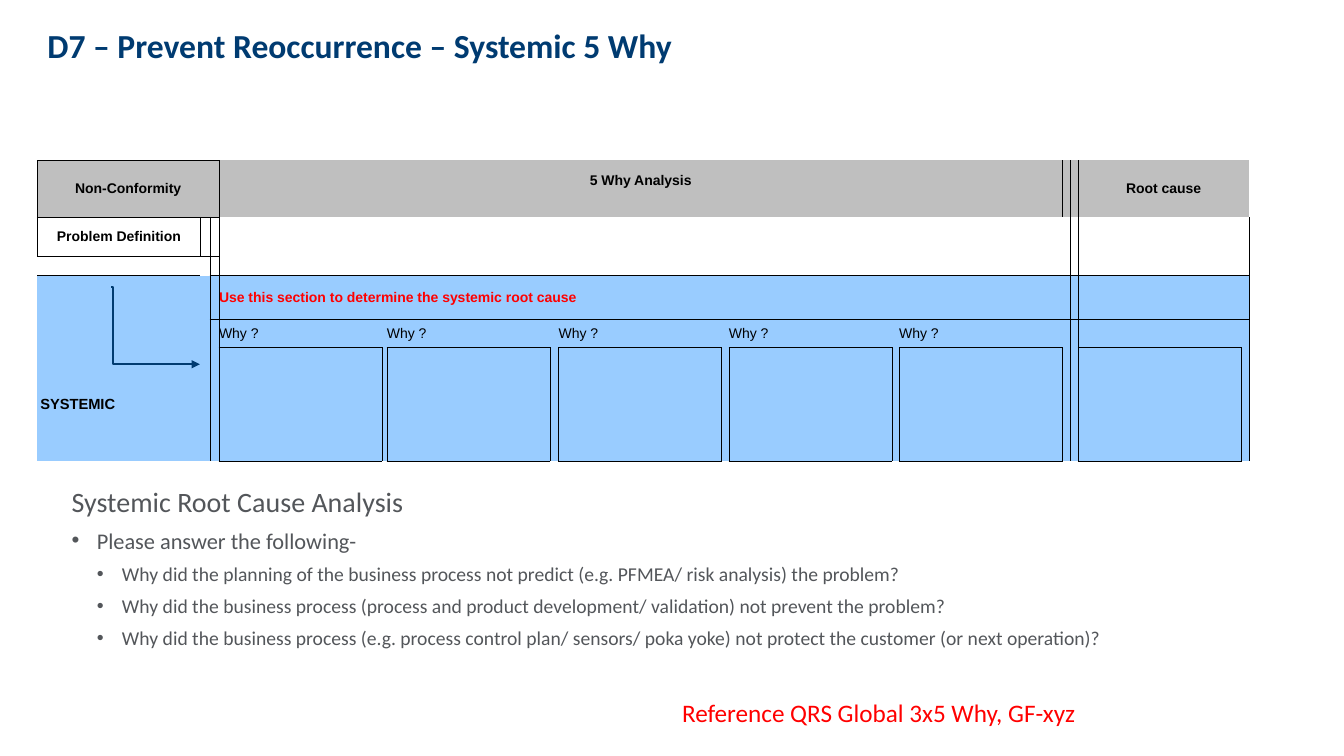
"""Build the D7 systemic 5 Why slide."""
from lxml.etree import SubElement
from pptx import Presentation
from pptx.dml.color import RGBColor
from pptx.enum.shapes import MSO_CONNECTOR
from pptx.enum.text import MSO_ANCHOR, MSO_AUTO_SIZE, PP_ALIGN
from pptx.oxml.ns import qn
from pptx.util import Cm, Pt

TITLE = "D7 – Prevent Reoccurrence – Systemic 5 Why"
REFERENCE = "Reference QRS Global 3x5 Why, GF-xyz"
QUESTIONS = [
    (0, 20, "Systemic Root Cause Analysis"),
    (1, 16, "Please answer the following-"),
    (2, 14, "Why did the planning of the business process not predict (e.g. PFMEA/ risk analysis) the problem?"),
    (2, 14, "Why did the business process (process and product development/ validation) not prevent the problem?"),
    (2, 14, "Why did the business process (e.g. process control plan/ sensors/ poka yoke) "
            "not protect the customer (or next operation)?"),
]

NAVY, GREY, RED, BLACK = "003B71", "53565A", "FF0000", "000000"
HEADER_FILL, SYSTEMIC_FILL = "BFBFBF", "99CCFF"
NO_STYLE = "{2D5ABB26-0587-4C30-8999-92F81FD0307C}"

BOX = 4.11
COLUMNS = [BOX, 0.24, 0.23, BOX, 0.12, BOX, 0.22, BOX, 0.18,
           BOX, 0.18, BOX, 0.2, 0.2, BOX, 0.2]
ROWS = [1.43, 1.0, 0.48, 1.09, 0.72, 2.86]
WHY_COLUMNS = range(3, 12, 2)
ROOT_COLUMN = 14
MERGES = [(0, 0, 2), (0, 3, 11), (0, 14, 15), (3, 3, 11)]

CENTRED = {"bold": True, "align": PP_ALIGN.CENTER}
CELL_TEXTS = {
    (0, 0): ("Non-Conformity", CENTRED),
    (0, 3): ("5 Why Analysis", CENTRED),
    (0, 14): ("Root cause", CENTRED),
    (1, 0): ("Problem Definition", CENTRED),
    (3, 3): ("Use this section to determine the systemic root cause", {"bold": True, "color": RED}),
    (5, 0): ("SYSTEMIC", {"bold": True, "size": 10.5}),
    **{(4, column): ("Why ?", {}) for column in WHY_COLUMNS},
}

OUTLINED = [(0, 0, 2), (1, 0, 0)] + [(5, column, column) for column in [*WHY_COLUMNS, ROOT_COLUMN]]
UPRIGHTS = [(2, 1), (13, 0), (16, 1)]


def rgb(value):
    """Turn a hex string into a colour."""
    return RGBColor.from_string(value)


def write(para, text, size=10, color=BLACK, font="Arial", bold=False, align=PP_ALIGN.LEFT):
    """Write one formatted span into a paragraph."""
    para.alignment = align
    span = para.add_run()
    span.text = text
    span.font.size = Pt(size)
    span.font.name = font
    span.font.bold = bold
    span.font.color.rgb = rgb(color)


def place(shape, left, top, width, height):
    """Move and size a shape in centimetres."""
    shape.left, shape.top, shape.width, shape.height = map(Cm, (left, top, width, height))


def set_bullet(para, level):
    """Indent a paragraph and give it a bullet below the top level."""
    para.level = level
    properties = para._p.get_or_add_pPr()
    properties.set("marL", str(Cm(0.635 * level)))
    properties.set("indent", str(-Cm(0.635) if level else 0))
    if not level:
        SubElement(properties, qn("a:buNone"))
        return
    SubElement(SubElement(properties, qn("a:buClr")), qn("a:srgbClr"), val=GREY)
    SubElement(properties, qn("a:buFont"), typeface="Arial")
    SubElement(properties, qn("a:buChar"), char="•")


def add_questions(body):
    """Fill the body placeholder with the bulleted questions."""
    place(body, 1.55, 12.09, 28.93, 6.15)
    frame = body.text_frame
    frame.auto_size = MSO_AUTO_SIZE.NONE
    frame.vertical_anchor = MSO_ANCHOR.TOP
    for index, (level, size, text) in enumerate(QUESTIONS):
        para = frame.add_paragraph() if index else frame.paragraphs[0]
        para.space_before, para.space_after = Pt(0), Pt(6)
        set_bullet(para, level)
        write(para, text, size=size, color=GREY, font="Calibri")


def table_edges():
    """Return the upright and level grid edges that carry a line."""
    upright = {(row, edge) for edge, first in UPRIGHTS for row in range(first, len(ROWS))}
    level = {(3, column) for column in range(2, len(COLUMNS))}
    for row, first, last in OUTLINED:
        upright |= {(row, first), (row, last + 1)}
        level |= {(edge, column) for edge in (row, row + 1) for column in range(first, last + 1)}
    return upright, level


def format_cell(cell, row, column, upright, level):
    """Set the margins, lines, fill and text of one cell."""
    cell.margin_left = cell.margin_right = cell.margin_top = cell.margin_bottom = 0
    cell.vertical_anchor = MSO_ANCHOR.MIDDLE
    right = column + (cell.span_width if cell.is_merge_origin else 1)
    sides = {"a:lnL": (row, column) in upright, "a:lnR": (row, right) in upright,
             "a:lnT": (row, column) in level, "a:lnB": (row + 1, column) in level}
    for tag, drawn in sides.items():
        if drawn:
            line = SubElement(cell._tc.get_or_add_tcPr(), qn(tag), w=str(Pt(0.5)))
            SubElement(SubElement(line, qn("a:solidFill")), qn("a:srgbClr"), val=BLACK)
    if row in (1, 2):
        cell.fill.background()
    else:
        cell.fill.solid()
        cell.fill.fore_color.rgb = rgb(SYSTEMIC_FILL if row else HEADER_FILL)
    para = cell.text_frame.paragraphs[0]
    if (row, column) in CELL_TEXTS:
        text, options = CELL_TEXTS[row, column]
        write(para, text, **options)
    else:
        SubElement(para._p, qn("a:endParaRPr"), sz="800")


def add_why_table(page):
    """Add the 5 Why grid."""
    frame = page.shapes.add_table(len(ROWS), len(COLUMNS), Cm(0.94), Cm(4.04),
                                  Cm(sum(COLUMNS)), Cm(sum(ROWS)))
    table = frame.table
    table.first_row = table.horz_banding = False
    table._tbl.tblPr.find(qn("a:tableStyleId")).text = NO_STYLE
    for column, width in zip(table.columns, COLUMNS):
        column.width = Cm(width)
    for row, height in zip(table.rows, ROWS):
        row.height = Cm(height)
    for row, first, last in MERGES:
        table.cell(row, first).merge(table.cell(row, last))
    upright, level = table_edges()
    for row in range(len(ROWS)):
        for column in range(len(COLUMNS)):
            format_cell(table.cell(row, column), row, column, upright, level)
    table.cell(0, 3).margin_bottom = Cm(0.4)
    table.cell(5, 0).margin_left = Cm(0.08)


def add_arrow(page):
    """Add the elbow arrow from the problem definition to the whys."""
    arrow = page.shapes.add_connector(MSO_CONNECTOR.ELBOW, Cm(2.8), Cm(7.24), Cm(5.04), Cm(9.18))
    arrow.line.color.rgb = rgb(NAVY)
    arrow.line.width = Pt(1.5)
    properties = arrow._element.spPr
    SubElement(properties.find(qn("a:ln")), qn("a:tailEnd"), type="triangle")
    SubElement(properties, qn("a:effectLst"))
    adjustments = properties.find(qn("a:prstGeom")).find(qn("a:avLst"))
    SubElement(adjustments, qn("a:gd"), name="adj1", fmla="val 2100")


def main():
    """Build and save the deck."""
    deck = Presentation()
    deck.slide_width, deck.slide_height = Cm(33.87), Cm(19.05)
    page = deck.slides.add_slide(deck.slide_layouts[1])
    title, body = page.placeholders
    place(title, 0.94, 0.51, 28.55, 1.98)
    title.text_frame.vertical_anchor = MSO_ANCHOR.TOP
    title.text_frame.auto_size = MSO_AUTO_SIZE.NONE
    write(title.text_frame.paragraphs[0], TITLE, size=24, color=NAVY, font="Calibri", bold=True)
    add_questions(body)
    add_why_table(page)
    add_arrow(page)
    box = page.shapes.add_textbox(Cm(16.94), Cm(17.45), Cm(12.55), Cm(1.02))
    box.text_frame.word_wrap = True
    write(box.text_frame.paragraphs[0], REFERENCE, size=18, color=RED, font="Calibri")
    deck.save("out.pptx")


if __name__ == "__main__":
    main()
